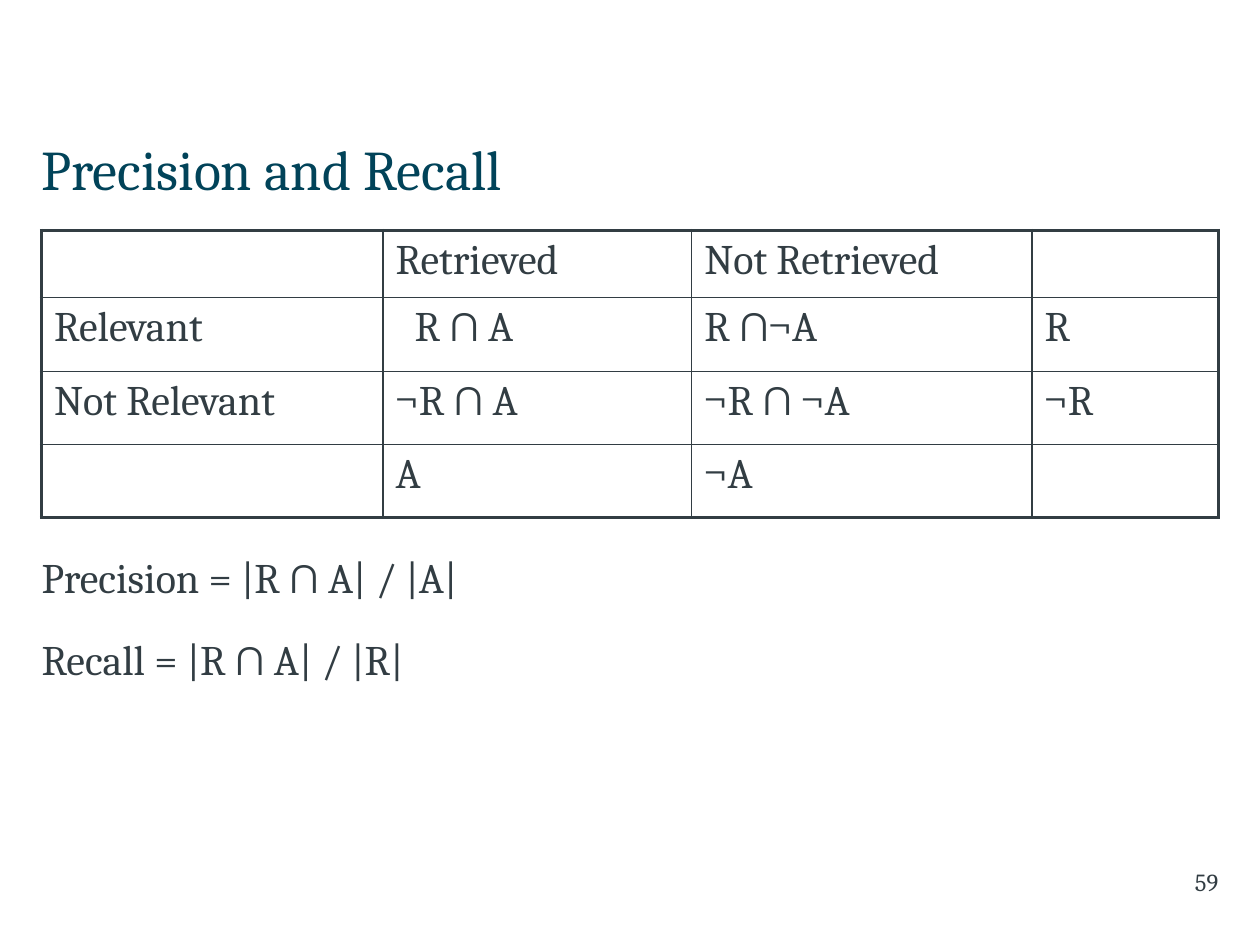
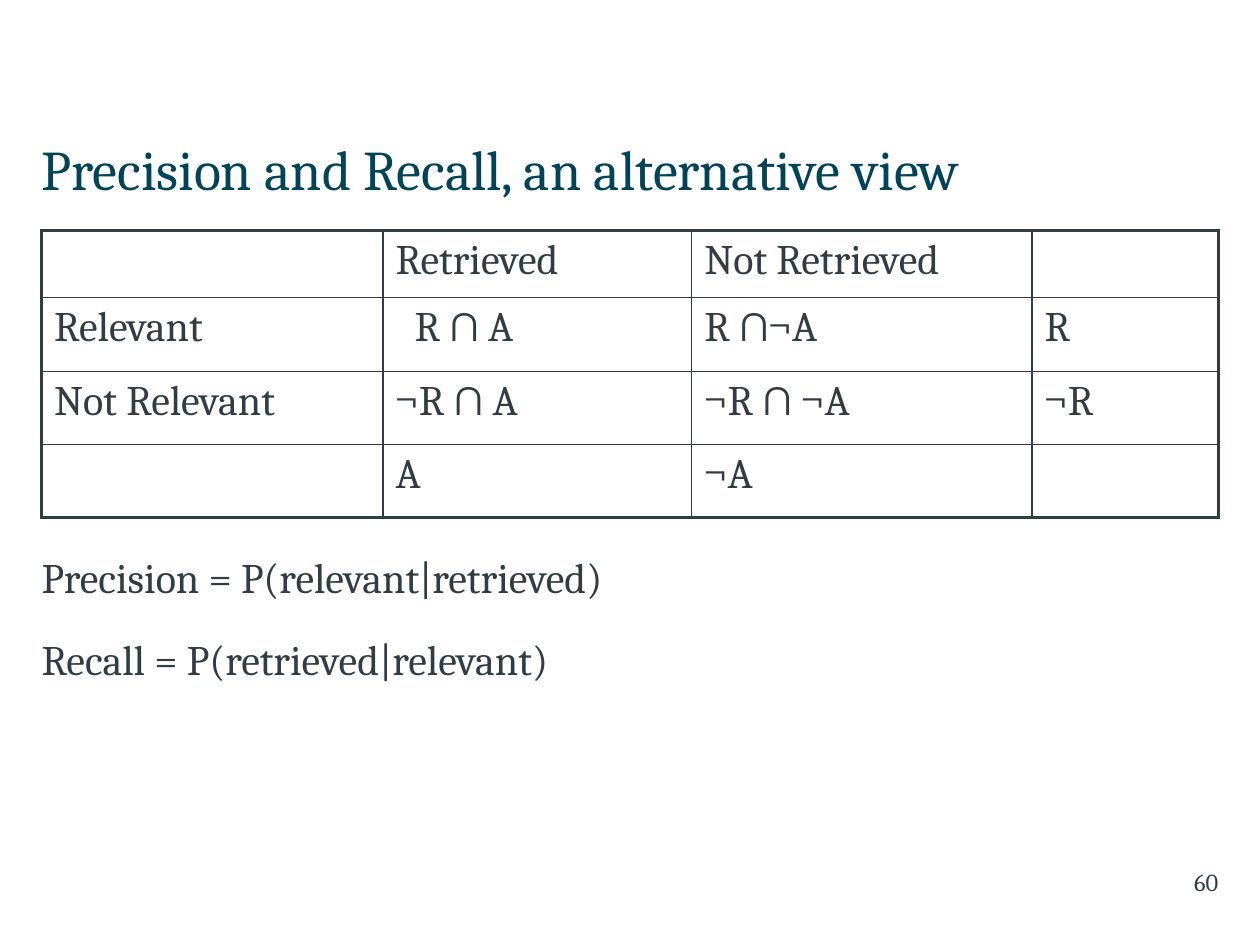
from lxml.etree import SubElement
from pptx import Presentation
from pptx.dml.color import RGBColor
from pptx.enum.text import MSO_ANCHOR, MSO_AUTO_SIZE, PP_ALIGN
from pptx.oxml.ns import qn
from pptx.util import Inches, Pt

# Shared look
FONT = "Cambria"
TITLE_COLOR = "014359"
TEXT_COLOR = "323D43"
TITLE_SIZE, BODY_SIZE, NUMBER_SIZE = 32, 24, 14
INNER_LINE, OUTER_LINE = 1, 2.25

# Regions: left, top, width, height in inches
TITLE_BOX = (0.33, 1, 9.33, 0.67)
TABLE_BOX = (0.33, 1.83, 9.33, 2.28)
FORMULA_BOX = (0.33, 4.33, 9.33, 2.33)
NUMBER_BOX = (7.5, 6.83, 2.17, 0.5)

# Contingency table shared by both slides
COLUMN_WIDTHS = (2.71, 2.45, 2.7, 1.48)
ROW_HEIGHTS = (0.53, 0.59, 0.58, 0.58)
CONTINGENCY = (
    ("", "Retrieved", "Not Retrieved", ""),
    ("Relevant", "R ∩ A", "R ∩¬A", "R"),
    ("Not Relevant", "¬R ∩ A", "¬R ∩ ¬A", "¬R"),
    ("", "A", "¬A", ""),
)
INDENTED_CELL = (1, 1)

FIRST_NUMBER = 59
SLIDES = (
    ("Precision and Recall",
     ("Precision = |R ∩ A| / |A|", "Recall = |R ∩ A| / |R|")),
    ("Precision and Recall, an alternative view",
     ("Precision = P(relevant|retrieved)", "Recall = P(retrieved|relevant)")),
)


def rgb(color):
    return RGBColor.from_string(color)


def add_run(paragraph, text, size, color=TEXT_COLOR):
    run = paragraph.add_run()
    run.text = text
    run.font.name = FONT
    run.font.size = Pt(size)
    run.font.color.rgb = rgb(color)


def set_frame(frame, left=0.0, right=0.1, anchor=MSO_ANCHOR.TOP):
    frame.word_wrap = True
    frame.auto_size = MSO_AUTO_SIZE.NONE
    frame.vertical_anchor = anchor
    frame.margin_left, frame.margin_right = Inches(left), Inches(right)
    frame.margin_top = frame.margin_bottom = Inches(0.05)


def add_title(slide, box, text):
    title = slide.shapes.title
    title.left, title.top, title.width, title.height = map(Inches, box)
    set_frame(title.text_frame, anchor=MSO_ANCHOR.MIDDLE)
    paragraph = title.text_frame.paragraphs[0]
    paragraph.alignment = PP_ALIGN.LEFT
    add_run(paragraph, text, TITLE_SIZE, TITLE_COLOR)


def set_borders(cell, widths):
    properties = cell._tc.get_or_add_tcPr()
    for side, width in widths.items():
        line = SubElement(properties, qn(f"a:ln{side}"), w=str(Pt(width)))
        fill = SubElement(line, qn("a:solidFill"))
        SubElement(fill, qn("a:srgbClr"), val=TEXT_COLOR)


def add_contingency_table(slide, box):
    last_row, last_column = len(ROW_HEIGHTS) - 1, len(COLUMN_WIDTHS) - 1
    table = slide.shapes.add_table(
        last_row + 1, last_column + 1, *map(Inches, box)).table
    table.first_row = table.horz_banding = False
    for column, width in zip(table.columns, COLUMN_WIDTHS):
        column.width = Inches(width)

    for r, (height, labels) in enumerate(zip(ROW_HEIGHTS, CONTINGENCY)):
        table.rows[r].height = Inches(height)
        for c, label in enumerate(labels):
            cell = table.cell(r, c)
            # Heavy frame around the table, thin lines inside
            on_frame = {"L": c == 0, "R": c == last_column,
                        "T": r == 0, "B": r == last_row}
            set_borders(cell, {side: OUTER_LINE if outer else INNER_LINE
                               for side, outer in on_frame.items()})
            cell.fill.background()
            if (r, c) == INDENTED_CELL:
                cell.margin_left = Inches(0.25)
            if label:
                add_run(cell.text_frame.paragraphs[0], label, BODY_SIZE)


def add_formulas(slide, box, formulas):
    frame = slide.shapes.add_textbox(*map(Inches, box)).text_frame
    set_frame(frame)
    for i, formula in enumerate(formulas):
        paragraph = frame.add_paragraph() if i else frame.paragraphs[0]
        paragraph.space_after = Pt(18)
        add_run(paragraph, formula, BODY_SIZE)


def add_slide_number(slide, box, number):
    frame = slide.shapes.add_textbox(*map(Inches, box)).text_frame
    set_frame(frame, left=0.1, right=0)
    paragraph = frame.paragraphs[0]
    paragraph.alignment = PP_ALIGN.RIGHT
    add_run(paragraph, str(number), NUMBER_SIZE)


def add_measure_slide(deck, title, formulas, number):
    slide = deck.slides.add_slide(deck.slide_layouts.get_by_name("Title Only"))
    slide.background.fill.solid()
    slide.background.fill.fore_color.rgb = rgb("FFFFFF")
    add_title(slide, TITLE_BOX, title)
    add_contingency_table(slide, TABLE_BOX)
    add_formulas(slide, FORMULA_BOX, formulas)
    add_slide_number(slide, NUMBER_BOX, number)


def main():
    deck = Presentation()
    deck.slide_width, deck.slide_height = Inches(10), Inches(7.5)
    for number, (title, formulas) in enumerate(SLIDES, FIRST_NUMBER):
        add_measure_slide(deck, title, formulas, number)
    deck.save("out.pptx")


if __name__ == "__main__":
    main()
